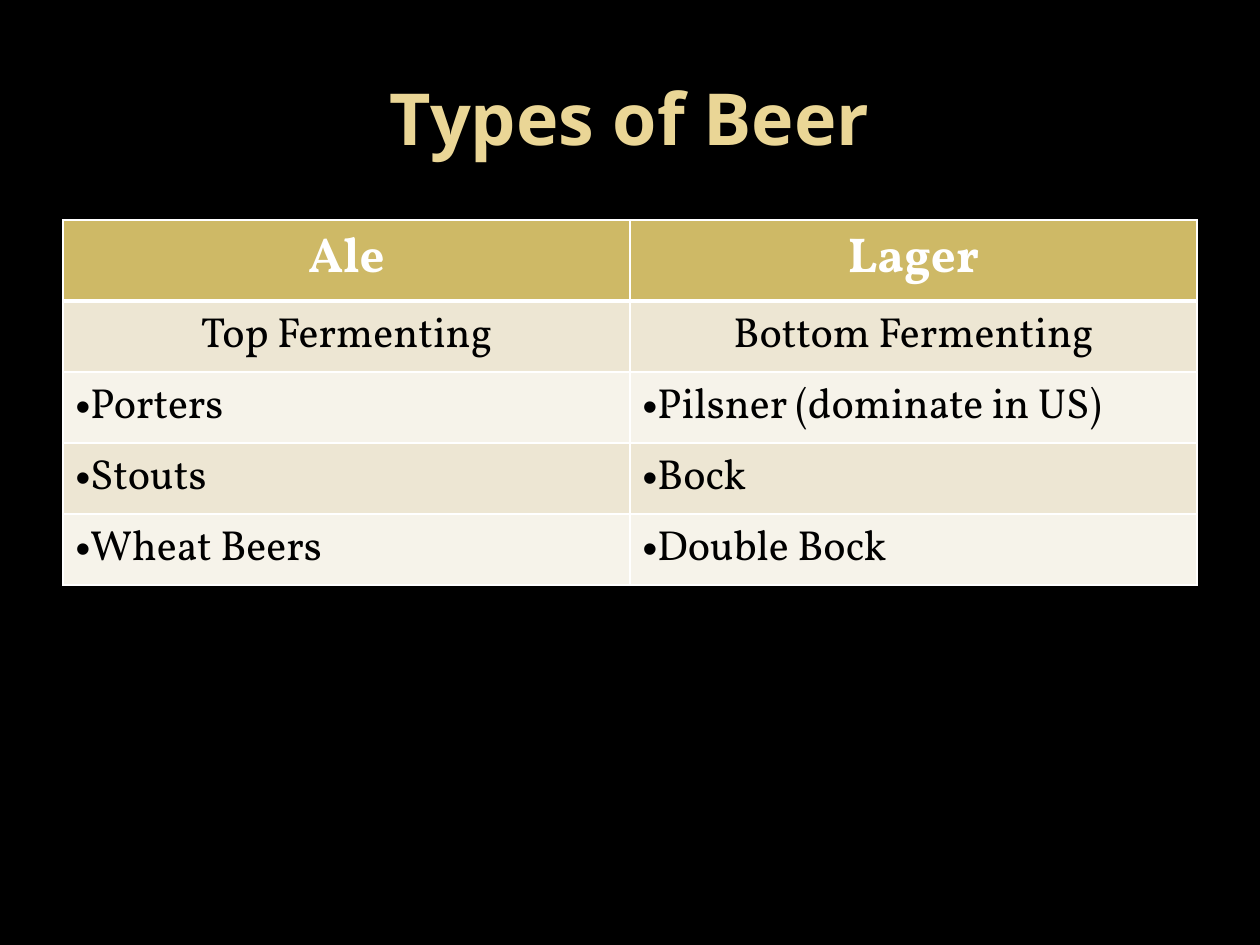
from lxml import etree
from pptx import Presentation
from pptx.dml.color import RGBColor
from pptx.enum.text import MSO_ANCHOR, PP_ALIGN
from pptx.oxml.ns import qn
from pptx.util import Emu, Pt

CENTER, LEFT = PP_ALIGN.CENTER, PP_ALIGN.LEFT
MIDDLE = MSO_ANCHOR.MIDDLE

# Content
TITLE = "Types of Beer"
BEERS = [
    ("Ale", "Lager"),
    ("Top Fermenting", "Bottom Fermenting"),
    ("Porters", "Pilsner (dominate in US)"),
    ("Stouts", "Bock"),
    ("Wheat Beers", "Double Bock"),
]
CENTERED_ROWS = 2  # header and fermentation; the rest are bulleted

THEME = {
    "background": "000000", "title": "EAD696", "header": "CEB966",
    "bands": ("EDE6D3", "F6F3EA"), "border": "FFFFFF",
    "header_text": "FFFFFF", "body_text": "000000",
    "title_font": "Noto Sans", "table_font": "Vollkorn",
    "title_size": 41, "header_size": 28, "body_size": 24,
    "rule": 1, "header_rule": 3,
}

# Geometry in px
SLIDE_W, SLIDE_H = 1260, 945
MARGIN = 63
CONTENT_W = SLIDE_W - 2 * MARGIN
TITLE_TOP, TITLE_H = 38, 157
TABLE_TOP, HEADER_H, ROW_H = 220, 81, 71


def px(length):
    return Emu(length * 914400 // 126)


def style_text(paragraph, font, size, color, bold, align):
    paragraph.alignment = align
    for run in paragraph.runs:
        run.font.name = font
        run.font.size = Pt(size)
        run.font.bold = bold
        run.font.color.rgb = RGBColor.from_string(color)


def add_bullet(paragraph):
    properties = paragraph._p.get_or_add_pPr()
    properties.set("marL", "0")
    properties.set("indent", "0")
    etree.SubElement(properties, qn("a:buFont")).set("typeface", "Arial")
    etree.SubElement(properties, qn("a:buChar")).set("char", "•")


def set_borders(cell, widths):
    properties = cell._tc.get_or_add_tcPr()
    for position, (side, width) in enumerate(widths.items()):
        line = etree.Element(qn(f"a:{side}"), w=str(Pt(width)))
        fill = etree.SubElement(line, qn("a:solidFill"))
        etree.SubElement(fill, qn("a:srgbClr")).set("val", THEME["border"])
        properties.insert(position, line)


def add_title(slide):
    title = slide.shapes.add_textbox(px(MARGIN), px(TITLE_TOP), px(CONTENT_W), px(TITLE_H))
    frame = title.text_frame
    frame.word_wrap = True
    frame.vertical_anchor = MIDDLE
    frame.text = TITLE
    style_text(frame.paragraphs[0], THEME["title_font"], THEME["title_size"],
               THEME["title"], True, CENTER)


def fill_cell(cell, text, row):
    header = row == 0
    kind = "header" if header else "body"
    cell.text = text
    paragraph = cell.text_frame.paragraphs[0]
    style_text(paragraph, THEME["table_font"], THEME[f"{kind}_size"],
               THEME[f"{kind}_text"], header, CENTER if row < CENTERED_ROWS else LEFT)
    if row >= CENTERED_ROWS:
        add_bullet(paragraph)

    cell.fill.solid()
    color = THEME["header"] if header else THEME["bands"][(row - 1) % 2]
    cell.fill.fore_color.rgb = RGBColor.from_string(color)
    rule, thick = THEME["rule"], THEME["header_rule"]
    set_borders(cell, {"lnL": rule, "lnR": rule,
                       "lnT": thick if row == 1 else rule,
                       "lnB": thick if header else rule})


def add_beer_table(slide):
    heights = [HEADER_H] + [ROW_H] * (len(BEERS) - 1)
    columns = len(BEERS[0])
    table = slide.shapes.add_table(len(BEERS), columns, px(MARGIN), px(TABLE_TOP),
                                   px(CONTENT_W), px(sum(heights))).table
    for column in table.columns:
        column.width = px(CONTENT_W // columns)
    for row, (beers, height) in enumerate(zip(BEERS, heights)):
        table.rows[row].height = px(height)
        for column, beer in enumerate(beers):
            fill_cell(table.cell(row, column), beer, row)


def main():
    deck = Presentation()
    deck.slide_width, deck.slide_height = px(SLIDE_W), px(SLIDE_H)
    slide = deck.slides.add_slide(deck.slide_layouts[6])
    slide.background.fill.solid()
    slide.background.fill.fore_color.rgb = RGBColor.from_string(THEME["background"])
    add_title(slide)
    add_beer_table(slide)
    deck.save("out.pptx")


if __name__ == "__main__":
    main()
